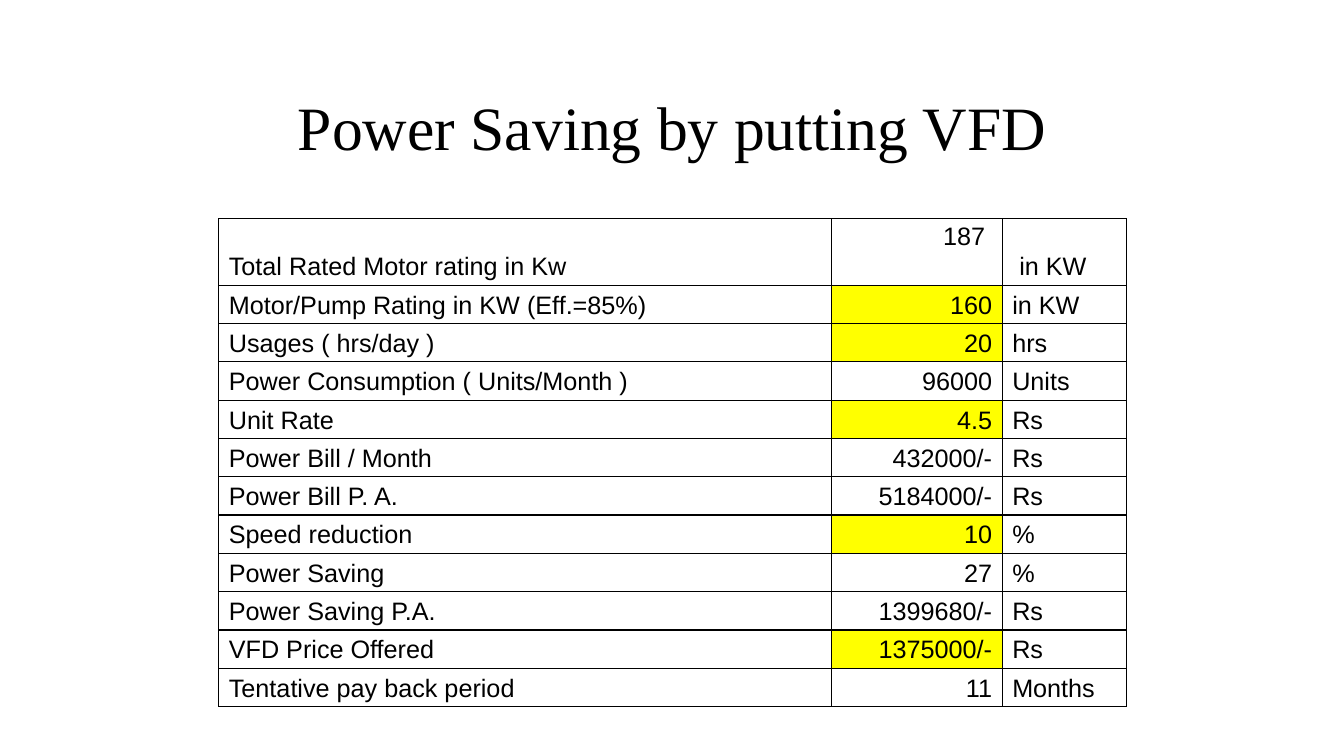
"""Build the slide with the table of power savings from a VFD."""
from lxml.etree import SubElement
from pptx import Presentation
from pptx.dml.color import RGBColor
from pptx.enum.text import MSO_ANCHOR, PP_ALIGN
from pptx.oxml.ns import qn
from pptx.util import Inches, Pt

BLACK = RGBColor(0x00, 0x00, 0x00)
YELLOW = RGBColor(0xFF, 0xFF, 0x00)

ROWS = [
    ("Total Rated Motor rating in Kw", "187", "in KW"),
    ("Motor/Pump Rating in KW (Eff.=85%)", "160", "in KW"),
    ("Usages ( hrs/day )", "20", "hrs"),
    ("Power Consumption ( Units/Month )", "96000", "Units"),
    ("Unit Rate", "4.5", "Rs"),
    ("Power Bill / Month", "432000/-", "Rs"),
    ("Power Bill P. A.", "5184000/-", "Rs"),
    ("Speed reduction", "10", "%"),
    ("Power Saving", "27", "%"),
    ("Power Saving P.A.", "1399680/-", "Rs"),
    ("VFD Price Offered", "1375000/-", "Rs"),
    ("Tentative pay back period", "11", "Months"),
]
INPUT_ROWS = {1, 2, 4, 7, 10}
COL_WIDTHS = (6.08, 1.69, 1.23)
FIRST_HEIGHT, ROW_HEIGHT = 0.66, 0.38


def add_text(p, text, font, size, align):
    p.alignment = align
    r = p.add_run()
    r.text = text
    r.font.name = font
    r.font.size = Pt(size)
    r.font.color.rgb = BLACK


def add_borders(cell):
    tcPr = cell._tc.get_or_add_tcPr()
    for i, side in enumerate(("lnL", "lnR", "lnT", "lnB")):
        ln = tcPr.makeelement(qn(f"a:{side}"), {"w": str(Pt(1))})
        fill = SubElement(ln, qn("a:solidFill"))
        SubElement(fill, qn("a:srgbClr"), val=str(BLACK))
        tcPr.insert(i, ln)


prs = Presentation()
prs.slide_width, prs.slide_height = Inches(13.33), Inches(7.5)
s = prs.slides.add_slide(prs.slide_layouts[5])

title = s.shapes.title
title.left, title.top = Inches(0.67), Inches(0.5)
title.width, title.height = Inches(12), Inches(1.5)
tf = title.text_frame
tf.vertical_anchor = MSO_ANCHOR.MIDDLE
add_text(tf.paragraphs[0], "Power Saving by putting VFD", "Times New Roman", 44, PP_ALIGN.CENTER)

height = FIRST_HEIGHT + ROW_HEIGHT * (len(ROWS) - 1)
table = s.shapes.add_table(len(ROWS), len(COL_WIDTHS), Inches(2.17), Inches(2.17),
                           Inches(sum(COL_WIDTHS)), Inches(height)).table
table.first_row = table.horz_banding = False
for col, width in zip(table.columns, COL_WIDTHS):
    col.width = Inches(width)

for i, values in enumerate(ROWS):
    table.rows[i].height = Inches(ROW_HEIGHT if i else FIRST_HEIGHT)
    for j, text in enumerate(values):
        cell = table.cell(i, j)
        cell.vertical_anchor = MSO_ANCHOR.BOTTOM
        cell.margin_left = cell.margin_right = Inches(0.1)
        cell.margin_top = cell.margin_bottom = Inches(0.04)
        if j == 1 and i in INPUT_ROWS:
            cell.fill.solid()
            cell.fill.fore_color.rgb = YELLOW
        else:
            cell.fill.background()
        add_borders(cell)
        add_text(cell.text_frame.paragraphs[0], text, "Arial", 18,
                 PP_ALIGN.RIGHT if j == 1 else PP_ALIGN.LEFT)

table.cell(0, 1).vertical_anchor = MSO_ANCHOR.TOP
table.cell(0, 1).margin_right = Inches(0.17)
table.cell(0, 2).margin_left = Inches(0.17)

prs.save("out.pptx")
